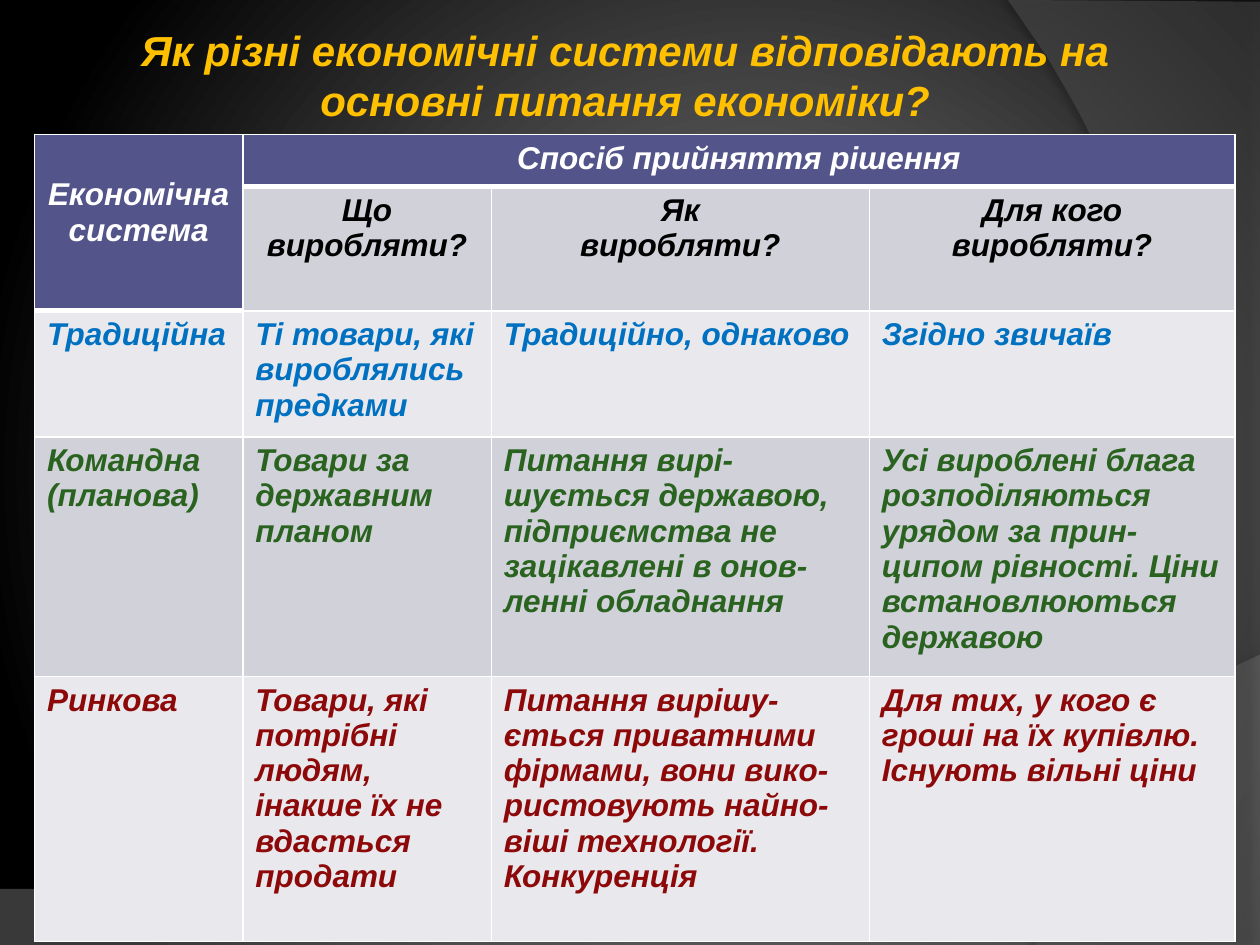
import lxml.etree
import pptx
import pptx.dml.color
import pptx.enum.text
import pptx.oxml
import pptx.oxml.ns
import pptx.util

Pt = pptx.util.Pt
RGBColor = pptx.dml.color.RGBColor
ALIGN = pptx.enum.text.PP_ALIGN
ANCHOR = pptx.enum.text.MSO_ANCHOR
qn = pptx.oxml.ns.qn

BLACK = RGBColor(0x00, 0x00, 0x00)
WHITE = RGBColor(0xFF, 0xFF, 0xFF)
GLOW = RGBColor(0x84, 0x84, 0x84)
WAVE = RGBColor(0x7F, 0x7F, 0x7F)
ARC = RGBColor(0x5E, 0x5E, 0x5E)
GOLD = RGBColor(0xFF, 0xC0, 0x00)
HEADER = RGBColor(0x53, 0x54, 0x8A)
BAND_DARK = RGBColor(0xD1, 0xD1, 0xDA)
BAND_LIGHT = RGBColor(0xE9, 0xE9, 0xED)
BLUE = RGBColor(0x00, 0x70, 0xC0)
GREEN = RGBColor(0x29, 0x63, 0x1F)
RED = RGBColor(0x8D, 0x09, 0x09)

COLUMN_WIDTHS = [119, 142, 216, 209]
ROW_HEIGHTS = [29.5, 67.5, 70.5, 133.5, 151.5]
ROW_FILLS = [HEADER, BAND_DARK, BAND_LIGHT, BAND_DARK, BAND_LIGHT]
ROW_COLORS = [WHITE, BLACK, BLUE, GREEN, RED]
ROWS = [
    ["Економічна система", "Спосіб прийняття рішення", "", ""],
    ["", "Що виробляти?", "Як\nвиробляти?", "Для кого виробляти?"],
    ["Традиційна", "Ті товари, які вироблялись предками",
     "Традиційно, однаково", "Згідно звичаїв"],
    ["Командна (планова)", "Товари за державним планом",
     "Питання вирі-шується державою, підприємства не зацікавлені в онов-ленні обладнання",
     "Усі вироблені блага розподіляються урядом за прин-ципом рівності. "
     "Ціни встановлюються державою"],
    ["Ринкова", "Товари, які потрібні людям, інакше їх не вдасться продати",
     "Питання вирішу-ється приватними фірмами, вони вико-ристовують найно-віші технології. "
     "Конкуренція",
     "Для тих, у кого є гроші на їх купівлю.\nІснують вільні ціни"],
]


def set_background(page):
    fill = page.background.fill
    fill.gradient()
    for stop, color, position in zip(fill.gradient_stops, (GLOW, BLACK), (0, 1)):
        stop.color.rgb = color
        stop.position = position
    gradient = page.element.find(".//" + qn("a:gradFill"))
    gradient.remove(gradient.find(qn("a:lin")))
    circle = lxml.etree.SubElement(gradient, qn("a:path"), path="circle")
    lxml.etree.SubElement(circle, qn("a:fillToRect"),
                          l="60000", t="50000", r="40000", b="50000")


def curve_points(start, first, second, end, steps=40):
    points = []
    for step in range(1, steps + 1):
        t = step / steps
        weights = ((1 - t) ** 3, 3 * t * (1 - t) ** 2, 3 * t * t * (1 - t), t ** 3)
        points.append(tuple(
            sum(weight * value for weight, value in zip(weights, axis))
            for axis in zip(start, first, second, end)))
    return points


def add_swoosh(page, corners, curve, color, opacity, shadow_opacity, distance, angle):
    points = corners + curve_points(corners[-1], *curve)
    builder = page.shapes.build_freeform(*points[0], scale=Pt(1))
    builder.add_line_segments(points[1:], close=True)
    swoosh = builder.convert_to_shape()
    swoosh.fill.solid()
    swoosh.fill.fore_color.rgb = color
    swoosh.line.fill.background()
    fill_color = swoosh.element.spPr.find(qn("a:solidFill"))[0]
    lxml.etree.SubElement(fill_color, qn("a:alpha"), val=str(opacity * 1000))
    effects = lxml.etree.SubElement(swoosh.element.spPr, qn("a:effectLst"))
    shadow = lxml.etree.SubElement(
        effects, qn("a:outerShdw"), blurRad=str(Pt(4)), dist=str(Pt(distance)),
        dir=str(angle * 60000), algn="ctr", rotWithShape="0")
    shadow_color = lxml.etree.SubElement(shadow, qn("a:srgbClr"), val=str(BLACK))
    lxml.etree.SubElement(shadow_color, qn("a:alpha"), val=str(shadow_opacity * 1000))


def write_text(frame, text, size, color, alignment):
    frame.word_wrap = True
    frame.text = text
    for para in frame.paragraphs:
        para.alignment = alignment
        font = para.font
        font.name = "Arial"
        font.size = Pt(size)
        font.bold = True
        font.italic = True
        font.color.rgb = color


def add_title(page, text):
    box = page.shapes.add_textbox(Pt(36.5), Pt(0), Pt(641.5), Pt(85.5))
    frame = box.text_frame
    frame.margin_left = frame.margin_right = Pt(3.6)
    frame.vertical_anchor = ANCHOR.MIDDLE
    write_text(frame, text, 24, GOLD, ALIGN.CENTER)


def set_borders(cell, top, bottom):
    properties = cell._tc.get_or_add_tcPr()
    edges = {"a:lnL": 1, "a:lnR": 1, "a:lnT": top, "a:lnB": bottom}
    for index, (tag, width) in enumerate(edges.items()):
        edge = pptx.oxml.parse_xml(
            f'<{tag} {pptx.oxml.ns.nsdecls("a")} w="{Pt(width)}"><a:solidFill>'
            f'<a:srgbClr val="{WHITE}"/></a:solidFill></{tag}>')
        properties.insert(index, edge)


def add_decision_table(page):
    frame = page.shapes.add_table(len(ROWS), len(COLUMN_WIDTHS), Pt(19.75), Pt(77),
                                  Pt(sum(COLUMN_WIDTHS)), Pt(sum(ROW_HEIGHTS)))
    table = frame.table
    for column, width in zip(table.columns, COLUMN_WIDTHS):
        column.width = Pt(width)
    for row, height in zip(table.rows, ROW_HEIGHTS):
        row.height = Pt(height)
    for i, texts in enumerate(ROWS):
        for j, text in enumerate(texts):
            cell = table.cell(i, j)
            last_header_row = 1 if j == 0 else 0
            cell.fill.solid()
            cell.fill.fore_color.rgb = HEADER if i <= last_header_row else ROW_FILLS[i]
            set_borders(cell, 3 if i == last_header_row + 1 else 1,
                        3 if i == last_header_row else 1)
            if text:
                alignment = ALIGN.CENTER if i < 2 else ALIGN.LEFT
                write_text(cell.text_frame, text, 18, ROW_COLORS[i], alignment)
    table.cell(0, 0).margin_top = Pt(24.3)
    table.cell(0, 0).merge(table.cell(1, 0))
    table.cell(0, 1).merge(table.cell(0, 3))


def main():
    deck = pptx.Presentation()
    deck.slide_width = Pt(720)
    deck.slide_height = Pt(540)
    page = deck.slides.add_slide(deck.slide_layouts[6])
    set_background(page)
    add_swoosh(page, [(0, 507.6), (0, 540), (720, 540), (720, 374.4)],
               [(402.5, 524.9), (281.5, 517.7), (0, 507.6)], WAVE, 45, 35, 3.5, 270)
    add_swoosh(page, [(576, 0), (720, 1.4), (720, 540), (591.1, 540)],
               [(673.2, 445.7), (733, 216), (576, 0)], ARC, 40, 45, 4, 180)
    add_title(page, "Як різні економічні системи відповідають на основні питання економіки?")
    add_decision_table(page)
    deck.save("out.pptx")


if __name__ == "__main__":
    main()
